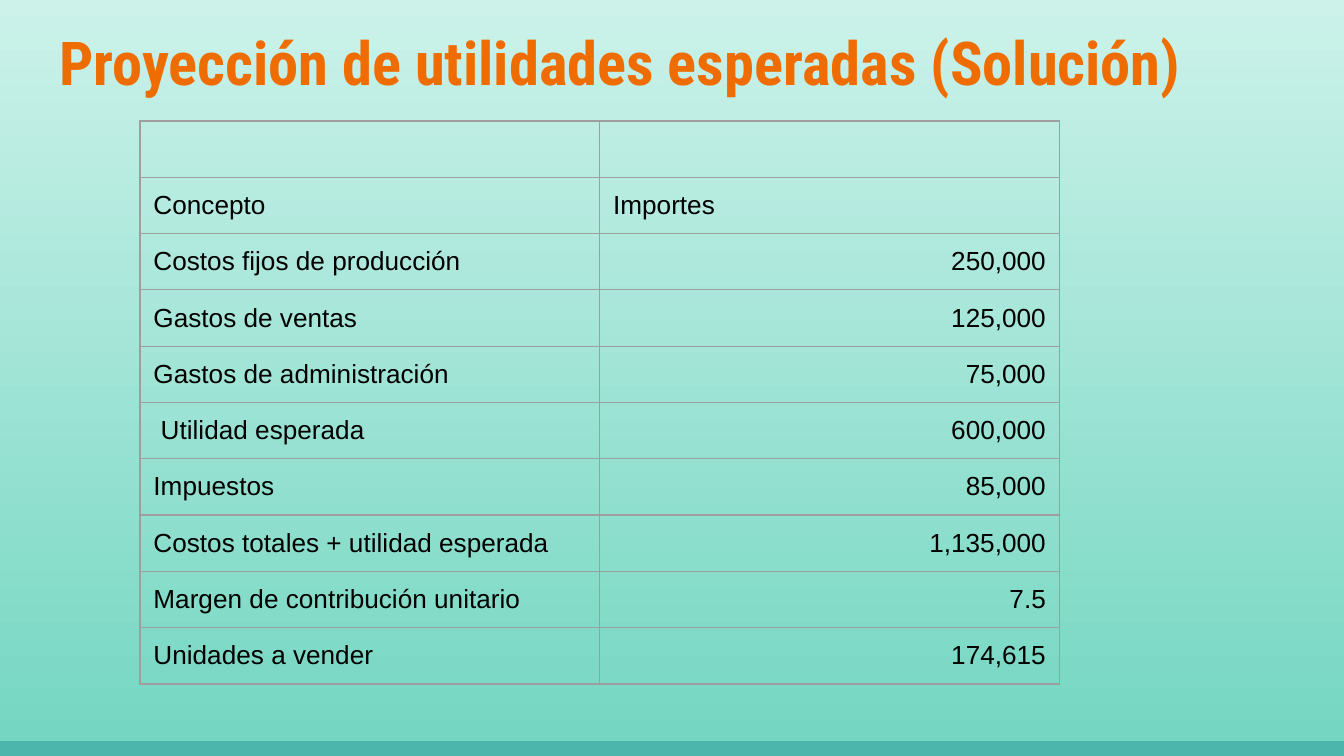
from typing import NamedTuple

from lxml.etree import SubElement
from pptx import Presentation
from pptx.dml.color import RGBColor
from pptx.enum.shapes import MSO_SHAPE
from pptx.enum.text import MSO_ANCHOR, PP_ALIGN
from pptx.oxml.ns import qn
from pptx.util import Pt

ORANGE = RGBColor(0xEF, 0x6C, 0x00)
TEAL = RGBColor(0x4D, 0xB6, 0xAC)
MINT_LIGHT = RGBColor(0xCC, 0xF2, 0xEA)
MINT_DARK = RGBColor(0x73, 0xD6, 0xC1)
GREY = RGBColor(0x9E, 0x9E, 0x9E)
BLACK = RGBColor(0x00, 0x00, 0x00)

WIDTH, HEIGHT = 720, 405
BAR_HEIGHT = 7.9
INSET = Pt(7.2)
COLUMN_WIDTH, ROW_HEIGHT = 246.25, 30.1


class Row(NamedTuple):
    concept: str
    amount: str
    align: PP_ALIGN = PP_ALIGN.RIGHT


ROWS = [
    Row("", ""),
    Row("Concepto", "Importes", PP_ALIGN.LEFT),
    Row("Costos fijos de producción", "250,000"),
    Row("Gastos de ventas", "125,000"),
    Row("Gastos de administración", "75,000"),
    Row(" Utilidad esperada", "600,000"),
    Row("Impuestos", "85,000"),
    Row("Costos totales + utilidad esperada", "1,135,000"),
    Row("Margen de contribución unitario", "7.5"),
    Row("Unidades a vender", "174,615"),
]


def set_insets(target) -> None:
    target.margin_left = target.margin_right = INSET
    target.margin_top = target.margin_bottom = INSET


def set_borders(cell, color: RGBColor, width: float) -> None:
    props = cell._tc.get_or_add_tcPr()
    for side in ("a:lnL", "a:lnR", "a:lnT", "a:lnB"):
        line = SubElement(props, qn(side), w=str(Pt(width)))
        fill = SubElement(line, qn("a:solidFill"))
        SubElement(fill, qn("a:srgbClr"), val=str(color))


def fill_cell(cell, text: str, align: PP_ALIGN) -> None:
    set_insets(cell)
    cell.vertical_anchor = MSO_ANCHOR.TOP
    set_borders(cell, GREY, 0.75)  # borders precede the fill in the XML
    cell.fill.background()
    p = cell.text_frame.paragraphs[0]
    p.text = text
    p.alignment = align
    p.font.name = "Arial"
    p.font.size = Pt(14)
    p.font.color.rgb = BLACK


def add_background(s) -> None:
    fill = s.background.fill
    fill.gradient()
    fill.gradient_angle = 270
    for stop, position, color in zip(fill.gradient_stops, (0, 1), (MINT_LIGHT, MINT_DARK)):
        stop.position = position
        stop.color.rgb = color


def add_bottom_bar(s) -> None:
    sp = s.shapes.add_shape(MSO_SHAPE.RECTANGLE, 0, Pt(HEIGHT - BAR_HEIGHT),
                            Pt(WIDTH), Pt(BAR_HEIGHT))
    sp.shadow.inherit = False
    sp.fill.solid()
    sp.fill.fore_color.rgb = TEAL
    sp.line.fill.background()


def format_title(s, text: str) -> None:
    sp = s.shapes.title
    sp.left, sp.top, sp.width, sp.height = Pt(24.5), Pt(5), Pt(671), Pt(55.5)
    tf = sp.text_frame
    set_insets(tf)
    tf.word_wrap = True
    tf.vertical_anchor = MSO_ANCHOR.MIDDLE
    p = tf.paragraphs[0]
    p.text = text
    p.alignment = PP_ALIGN.LEFT
    p.font.name = "Roboto Condensed"
    p.font.size = Pt(32.4)
    p.font.bold = True
    p.font.color.rgb = ORANGE


def add_profit_table(s, rows: list[Row]) -> None:
    table = s.shapes.add_table(len(rows), 2, Pt(75), Pt(64.8), Pt(2 * COLUMN_WIDTH),
                               Pt(len(rows) * ROW_HEIGHT)).table
    table.first_row = table.horz_banding = False
    for column in table.columns:
        column.width = Pt(COLUMN_WIDTH)
    for i, row in enumerate(rows):
        table.rows[i].height = Pt(ROW_HEIGHT)
        fill_cell(table.cell(i, 0), row.concept, PP_ALIGN.LEFT)
        fill_cell(table.cell(i, 1), row.amount, row.align)


def main() -> None:
    prs = Presentation()
    prs.slide_width, prs.slide_height = Pt(WIDTH), Pt(HEIGHT)
    s = prs.slides.add_slide(prs.slide_layouts[5])  # title only
    add_background(s)
    add_bottom_bar(s)
    format_title(s, "Proyección de utilidades esperadas (Solución)")
    add_profit_table(s, ROWS)
    prs.save("out.pptx")


if __name__ == "__main__":
    main()
